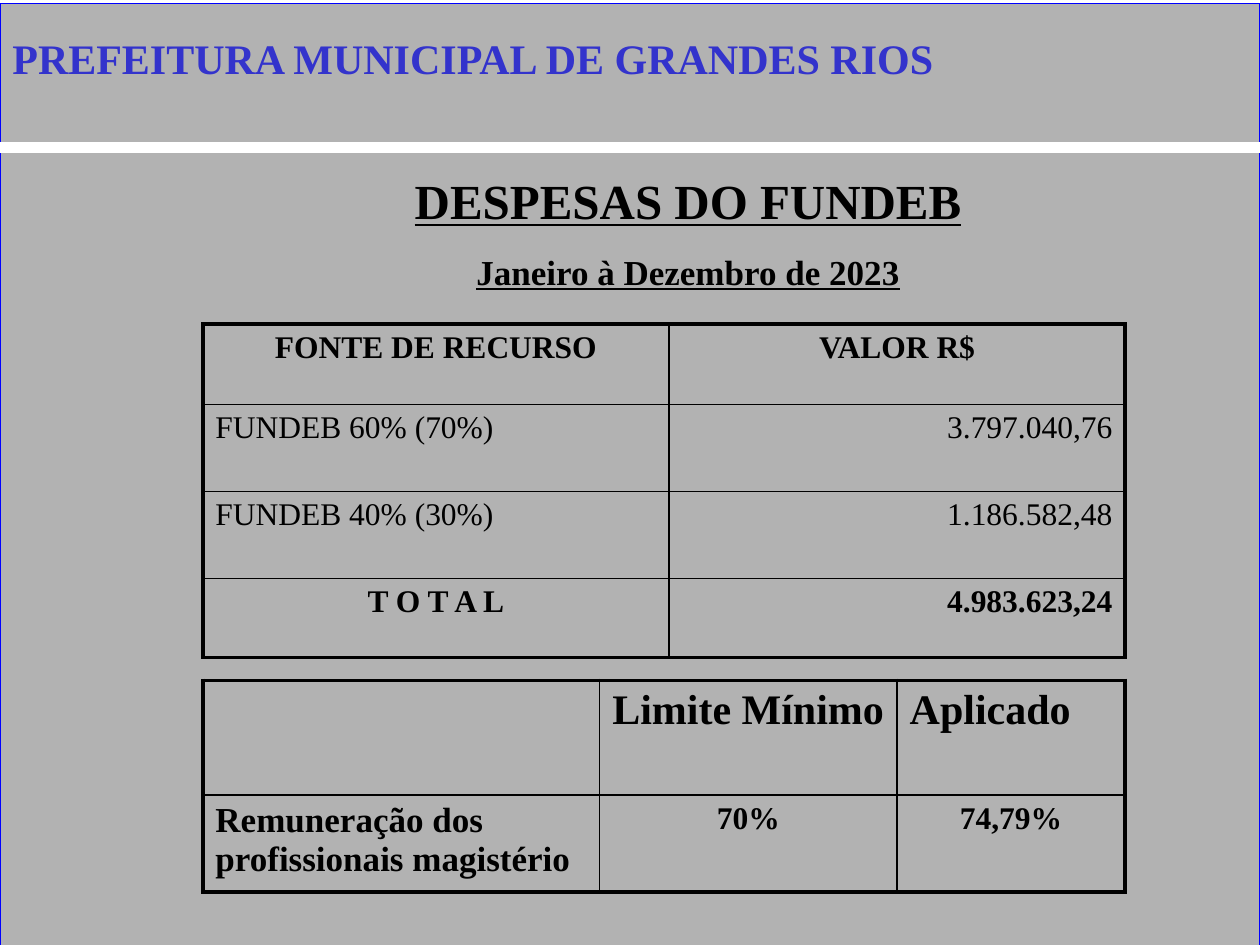
import pptx
import pptx.util
import pptx.dml.color
import pptx.enum.shapes
import pptx.enum.text
import pptx.oxml
import pptx.oxml.ns
from lxml import etree

Inches, Pt = pptx.util.Inches, pptx.util.Pt
ALIGN = {
    "l": pptx.enum.text.PP_ALIGN.LEFT,
    "c": pptx.enum.text.PP_ALIGN.CENTER,
    "r": pptx.enum.text.PP_ALIGN.RIGHT,
}

# Content: each cell is (text, alignment, size, bold)
FONT = "Times New Roman"
COLORS = {"ground": "B2B2B2", "frame": "0000FF", "rule": "FFFFFF",
          "ink": "000000", "title": "3333CC", "shadow": "808080"}
TITLE = "PREFEITURA MUNICIPAL DE GRANDES RIOS"
HEADINGS = [("DESPESAS DO FUNDEB", 28), ("Janeiro à Dezembro de 2023", 20)]
TABLES = [
    {"top": 2.57, "columns": [3.7, 3.62], "rows": [0.64, 0.69, 0.69, 0.63],
     "cells": [
         [("FONTE DE RECURSO", "c", 18, True), ("VALOR R$", "c", 18, True)],
         [("FUNDEB 60% (70%)", "l", 18, False), ("3.797.040,76", "r", 18, False)],
         [("FUNDEB 40% (30%)", "l", 18, False), ("1.186.582,48", "r", 18, False)],
         [("T O T A L", "c", 18, True), ("4.983.623,24", "r", 18, True)],
     ]},
    {"top": 5.4, "columns": [3.15, 2.36, 1.81], "rows": [0.91, 0.77],
     "cells": [
         [None, ("Limite Mínimo", "l", 24, True), ("Aplicado", "l", 24, True)],
         [("Remuneração dos profissionais magistério", "l", 20, True),
          ("70%", "c", 18, True), ("74,79%", "c", 18, True)],
     ]},
]
TABLE_LEFT = 1.61
OUTER, INNER = 2.25, 1


def rgb(name):
    return pptx.dml.color.RGBColor.from_string(COLORS[name])


def add_run(paragraph, text, size, bold=True, color="ink", underline=None):
    run = paragraph.add_run()
    run.text = text
    font = run.font
    font.name, font.size, font.bold = FONT, Pt(size), bold
    font.underline = underline
    font.color.rgb = rgb(color)
    return run


def add_text_box(slide, left, top, width, height):
    frame = slide.shapes.add_textbox(*map(Inches, (left, top, width, height))).text_frame
    frame.word_wrap = True
    return frame


def add_text_shadow(run):
    effects = pptx.oxml.parse_xml(
        f'<a:effectLst {pptx.oxml.ns.nsdecls("a")}>'
        '<a:outerShdw dist="35921" dir="2700000">'
        f'<a:srgbClr val="{COLORS["shadow"]}"/></a:outerShdw></a:effectLst>')
    run.font.fill._xPr.find(pptx.oxml.ns.qn("a:solidFill")).addnext(effects)


def set_borders(cell, widths):
    properties = cell._tc.get_or_add_tcPr()
    for side, width in widths.items():
        properties.append(pptx.oxml.parse_xml(
            f'<a:ln{side} {pptx.oxml.ns.nsdecls("a")} w="{int(Pt(width))}">'
            f'<a:solidFill><a:srgbClr val="{COLORS["ink"]}"/></a:solidFill></a:ln{side}>'))


def add_table(slide, top, columns, rows, cells):
    table = slide.shapes.add_table(
        len(rows), len(columns), Inches(TABLE_LEFT), Inches(top),
        Inches(sum(columns)), Inches(sum(rows))).table
    table.first_row = table.horz_banding = False
    for column, width in zip(table.columns, columns):
        column.width = Inches(width)
    for row, height in zip(table.rows, rows):
        row.height = Inches(height)
    for i, line in enumerate(cells):
        for j, content in enumerate(line):
            cell = table.cell(i, j)
            # Heavy outline, thin inner grid
            edges = {"L": j == 0, "R": j == len(columns) - 1,
                     "T": i == 0, "B": i == len(rows) - 1}
            set_borders(cell, {side: OUTER if edge else INNER
                               for side, edge in edges.items()})
            cell.fill.background()
            if content:
                text, align, size, bold = content
                paragraph = cell.text_frame.paragraphs[0]
                paragraph.alignment = ALIGN[align]
                paragraph.space_before = Pt(0.2 * size)
                add_run(paragraph, text, size, bold)


def main():
    presentation = pptx.Presentation()
    presentation.slide_width, presentation.slide_height = Inches(10), Inches(7.5)
    slide = presentation.slides.add_slide(presentation.slide_layouts[6])

    # Grey ground
    ground = slide.shapes.add_shape(
        pptx.enum.shapes.MSO_SHAPE.RECTANGLE, 0, Inches(0.03), Inches(10), Inches(7.5))
    ground.shadow.inherit = False
    ground.fill.solid()
    ground.fill.fore_color.rgb = rgb("ground")
    ground.line.color.rgb = rgb("frame")
    ground.line.width = Pt(0.75)

    # White rule under the title
    rule = slide.shapes.add_connector(
        pptx.enum.shapes.MSO_CONNECTOR.STRAIGHT, 0, Inches(1.17), Inches(10), Inches(1.17))
    rule.line.color.rgb = rgb("rule")
    rule.line.width = Pt(6)
    etree.SubElement(rule._element.spPr, pptx.oxml.ns.qn("a:effectLst"))

    # Headings
    frame = add_text_box(slide, 1.42, 1.07, 8.08, 5.51)
    for i, (text, size) in enumerate(HEADINGS):
        paragraph = frame.add_paragraph() if i else frame.paragraphs[0]
        paragraph.alignment = ALIGN["c"]
        paragraph.line_spacing = 1.5
        indents = paragraph._p.get_or_add_pPr()
        indents.set("marL", str(Inches(0.5)))
        indents.set("indent", str(Inches(-0.5)))
        add_run(paragraph, text, size, underline=True)

    # Tables
    for table in TABLES:
        add_table(slide, **table)

    # Title
    paragraph = add_text_box(slide, 0, 0.21, 9.49, 0.5).paragraphs[0]
    paragraph.space_before = Pt(12)
    add_text_shadow(add_run(paragraph, TITLE, 24, color="title"))

    presentation.save("out.pptx")


if __name__ == "__main__":
    main()
